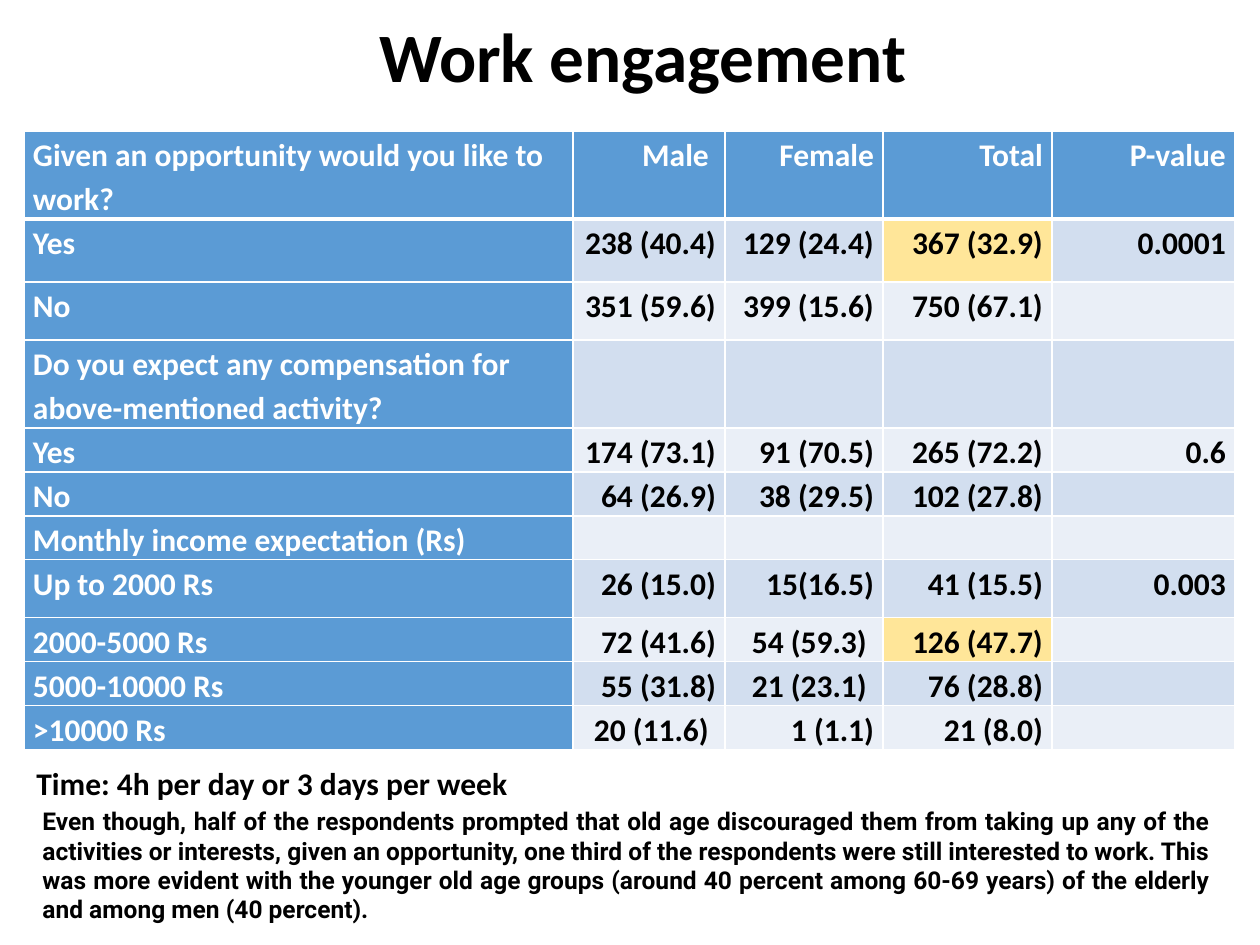
from lxml.etree import SubElement
from pptx import Presentation
from pptx.dml.color import RGBColor
from pptx.enum.text import MSO_ANCHOR, PP_ALIGN
from pptx.oxml.ns import qn
from pptx.util import Pt

PX = 914400 // 126
COLORS = {
    "ink": "000000",
    "paper": "FFFFFF",
    "header": "5B9BD5",
    "odd": "D2DEEF",
    "even": "EAEFF7",
    "highlight": "FFE699",
}

TITLE = "Work engagement"
ANSWERS = [
    ("Given an opportunity would you like to work?", "Male ", "Female", "Total", "P-value"),
    ("Yes", "238 (40.4)", "129 (24.4)", "367 (32.9)", "0.0001"),
    ("No", "351 (59.6)", "399 (15.6)", "750 (67.1)", ""),
    ("Do you expect any compensation for above-mentioned activity?", "", "", "", ""),
    ("Yes", "174 (73.1)", "91 (70.5)", "265 (72.2)", "0.6"),
    ("No", "64 (26.9)", "38 (29.5)", "102 (27.8)", ""),
    ("Monthly income expectation (Rs)", "", "", "", ""),
    ("Up to 2000 Rs", "26 (15.0)", "15(16.5)", "41 (15.5)", "0.003"),
    ("2000-5000 Rs", "72 (41.6)", "54 (59.3) ", "126 (47.7)", ""),
    ("5000-10000 Rs", "55 (31.8)", "21 (23.1) ", "76 (28.8)", ""),
    (">10000 Rs", "20 (11.6) ", "1 (1.1)", "21 (8.0)", ""),
]
HIGHLIGHTS = {(1, 3), (8, 3)}
COLUMN_WIDTHS = [549, 152, 158, 169, 183]
ROW_HEIGHTS = [88, 63, 58, 88, 44, 44, 44, 58, 44, 44, 44]
TIME_NOTE = "Time: 4h per day or 3 days per week"
FINDING = (
    "Even though, half of the respondents prompted that old age discouraged them "
    "from taking up any of the activities or interests, given an opportunity, one "
    "third of the respondents were still interested to work. This was more evident "
    "with the younger old age groups (around 40 percent among 60-69 years) of the "
    "elderly and among men (40 percent)."
)


def rgb(name):
    return RGBColor.from_string(COLORS[name])


def write(frame, text, size=18, font="Calibri", color="ink", align=PP_ALIGN.LEFT,
          spacing=1.15, before=0, after=0):
    paragraph = frame.paragraphs[0]
    paragraph.alignment = align
    paragraph.line_spacing = spacing
    paragraph.space_before = Pt(before)
    paragraph.space_after = Pt(after)
    if text:
        run = paragraph.add_run()
        run.text = text
        run.font.size = Pt(size)
        run.font.name = font
        run.font.bold = True
        run.font.color.rgb = rgb(color)


def add_text(slide, box, text, wrap=True, anchor=MSO_ANCHOR.TOP, **text_format):
    frame = slide.shapes.add_textbox(*(n * PX for n in box)).text_frame
    frame.word_wrap = wrap
    frame.vertical_anchor = anchor
    write(frame, text, **text_format)


def draw_borders(cell, row):
    properties = cell._tc.get_or_add_tcPr()
    widths = {"lnL": 1, "lnR": 1, "lnT": 3 if row == 1 else 1, "lnB": 3 if row == 0 else 1}
    for side, width in widths.items():
        line = SubElement(properties, qn(f"a:{side}"), w=str(Pt(width)))
        fill = SubElement(line, qn("a:solidFill"))
        SubElement(fill, qn("a:srgbClr"), val=COLORS["paper"])


def cell_fill(row, column):
    if row == 0 or column == 0:
        return "header"
    if (row, column) in HIGHLIGHTS:
        return "highlight"
    return "odd" if row % 2 else "even"


def add_answers(slide, left, top):
    table = slide.shapes.add_table(
        len(ANSWERS), len(COLUMN_WIDTHS), left * PX, top * PX,
        sum(COLUMN_WIDTHS) * PX, sum(ROW_HEIGHTS) * PX,
    ).table
    table.first_col = True
    for column, width in zip(table.columns, COLUMN_WIDTHS):
        column.width = width * PX
    for row, height in zip(table.rows, ROW_HEIGHTS):
        row.height = height * PX
    for row, answers in enumerate(ANSWERS):
        for column, answer in enumerate(answers):
            cell = table.cell(row, column)
            fill = cell_fill(row, column)
            cell.margin_left = cell.margin_right = 9 * PX
            cell.margin_top = cell.margin_bottom = 0
            draw_borders(cell, row)
            cell.fill.solid()
            cell.fill.fore_color.rgb = rgb(fill)
            write(cell.text_frame, answer,
                  color="paper" if fill == "header" else "ink",
                  align=PP_ALIGN.RIGHT if column else PP_ALIGN.LEFT)


def main():
    deck = Presentation()
    deck.slide_width, deck.slide_height = 1260 * PX, 945 * PX
    slide = deck.slides.add_slide(deck.slide_layouts[6])
    add_text(slide, (100, 14, 1086, 93), TITLE, anchor=MSO_ANCHOR.MIDDLE,
             size=39.6, align=PP_ALIGN.CENTER, spacing=0.9)
    add_answers(slide, 24, 131)
    add_text(slide, (24, 752, 500, 57), TIME_NOTE, wrap=False)
    add_text(slide, (30, 800, 1193, 131), FINDING, size=14, font="Roboto",
             align=PP_ALIGN.JUSTIFY, spacing=1.0, before=12, after=10)
    deck.save("out.pptx")


if __name__ == "__main__":
    main()
